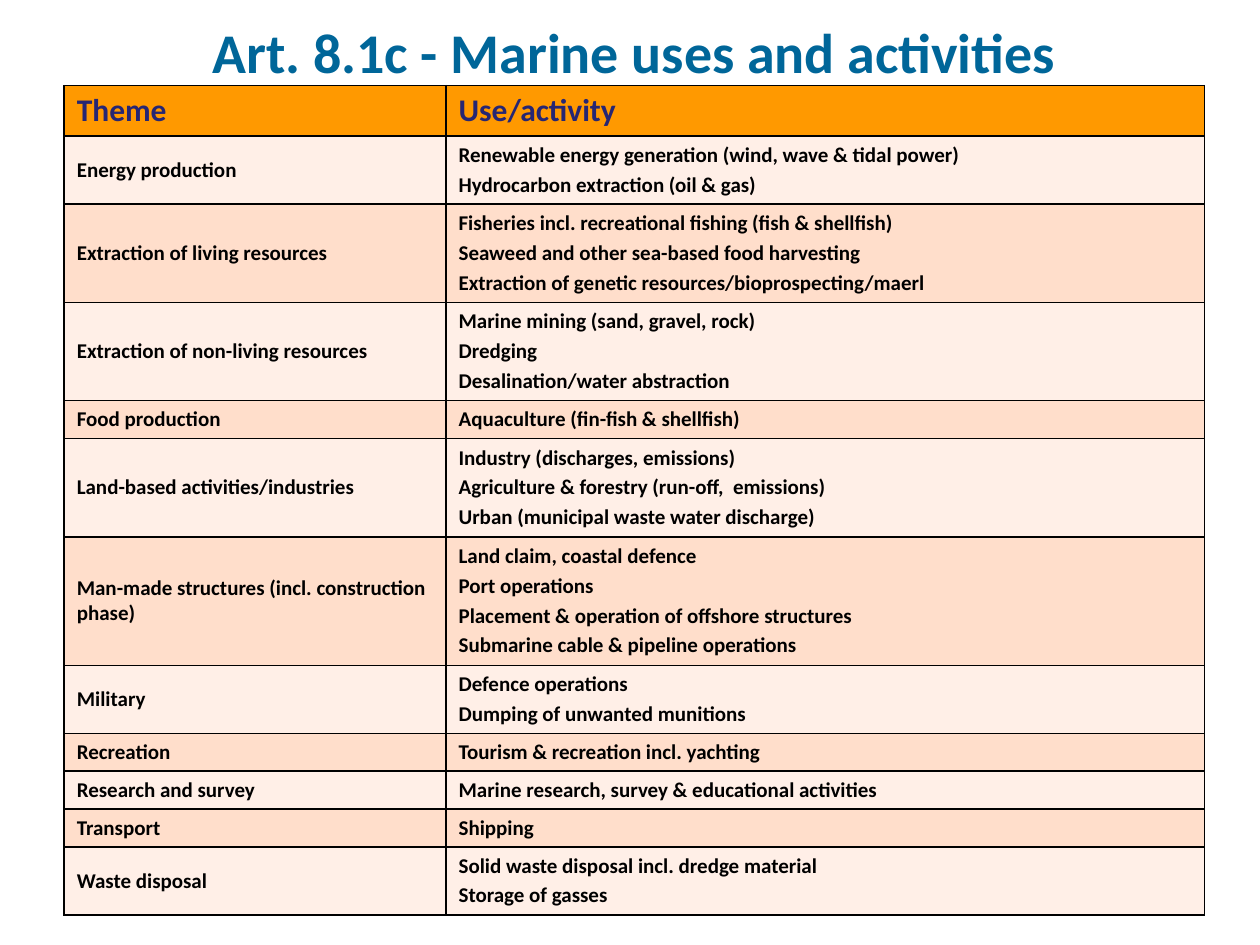
"""Build the slide listing marine uses and activities by theme."""
from lxml import etree
from pptx import Presentation
from pptx import util as u
from pptx.dml.color import RGBColor
from pptx.enum import text
from pptx.oxml import ns

TITLE = "Art. 8.1c - Marine uses and activities"
HEADER = ("Theme", ["Use/activity"])
ACTIVITIES = [
    ("Energy production", [
        "Renewable energy generation (wind, wave & tidal power)",
        "Hydrocarbon extraction (oil & gas)"]),
    ("Extraction of living resources", [
        "Fisheries incl. recreational fishing (fish & shellfish)",
        "Seaweed and other sea-based food harvesting",
        "Extraction of genetic resources/bioprospecting/maerl"]),
    ("Extraction of non-living resources", [
        "Marine mining (sand, gravel, rock)",
        "Dredging",
        "Desalination/water abstraction"]),
    ("Food production", ["Aquaculture (fin-fish & shellfish)"]),
    ("Land-based activities/industries", [
        "Industry (discharges, emissions)",
        "Agriculture & forestry (run-off,  emissions)",
        "Urban (municipal waste water discharge)"]),
    ("Man-made structures (incl. construction phase)", [
        "Land claim, coastal defence",
        "Port operations",
        "Placement & operation of offshore structures",
        "Submarine cable & pipeline operations"]),
    ("Military", ["Defence operations", "Dumping of unwanted munitions"]),
    ("Recreation", ["Tourism & recreation incl. yachting"]),
    ("Research and survey", ["Marine research, survey & educational activities"]),
    ("Transport", ["Shipping"]),
    ("Waste disposal", [
        "Solid waste disposal incl. dredge material",
        "Storage of gasses"]),
]
THEME = {
    "font": "Calibri",
    "title": {"size": 32, "color": "006699"},
    "header": {"size": 18, "color": "262673"},
    "body": {"size": 12, "color": "000000"},
    "header_fill": "FF9900",
    "band_fills": ("FFEFE7", "FFDECB"),
    "border": "000000",
}
COLUMN_WIDTHS = (3.03, 6.02)
HEADER_HEIGHT = 0.4
ROW_PADDING, LINE_HEIGHT = 0.06, 0.24


def write_text(frame, lines, *, size, color, align=text.PP_ALIGN.LEFT):
    frame.word_wrap = True
    for index, line in enumerate(lines):
        paragraph = frame.add_paragraph() if index else frame.paragraphs[0]
        paragraph.alignment = align
        if index:
            paragraph.space_before = u.Pt(size * 0.2)
        run = paragraph.add_run()
        run.text = line
        run.font.name = THEME["font"]
        run.font.size = u.Pt(size)
        run.font.bold = True
        run.font.color.rgb = RGBColor.from_string(color)


def add_borders(cell):
    properties = cell._tc.get_or_add_tcPr()
    for index, side in enumerate(("lnL", "lnR", "lnT", "lnB")):
        line = etree.Element(ns.qn(f"a:{side}"), w=str(u.Pt(1)))
        fill = etree.SubElement(line, ns.qn("a:solidFill"))
        etree.SubElement(fill, ns.qn("a:srgbClr"), val=THEME["border"])
        properties.insert(index, line)


def fill_row(table, index, entry, height, fill, style):
    table.rows[index].height = u.Inches(height)
    theme, uses = entry
    for cell, lines in zip(table.rows[index].cells, ([theme], uses)):
        cell.vertical_anchor = text.MSO_ANCHOR.MIDDLE
        cell.margin_left = cell.margin_right = u.Inches(0.1)
        cell.margin_top = cell.margin_bottom = u.Inches(0.05)
        cell.fill.solid()
        cell.fill.fore_color.rgb = RGBColor.from_string(fill)
        add_borders(cell)
        write_text(cell.text_frame, lines, **style)


def add_title(slide):
    shape = slide.shapes.add_textbox(
        u.Inches(0.7), u.Inches(0.13), u.Inches(8.67), u.Inches(0.55))
    shape.text_frame.vertical_anchor = text.MSO_ANCHOR.MIDDLE
    write_text(shape.text_frame, [TITLE], align=text.PP_ALIGN.CENTER, **THEME["title"])


def add_activity_table(slide):
    heights = [ROW_PADDING + LINE_HEIGHT * len(uses) for _, uses in ACTIVITIES]
    table = slide.shapes.add_table(
        len(ACTIVITIES) + 1, len(COLUMN_WIDTHS), u.Inches(0.51), u.Inches(0.68),
        u.Inches(sum(COLUMN_WIDTHS)), u.Inches(HEADER_HEIGHT + sum(heights))).table
    for column, width in zip(table.columns, COLUMN_WIDTHS):
        column.width = u.Inches(width)
    fill_row(table, 0, HEADER, HEADER_HEIGHT, THEME["header_fill"], THEME["header"])
    for index, (entry, height) in enumerate(zip(ACTIVITIES, heights)):
        fill = THEME["band_fills"][index % 2]
        fill_row(table, index + 1, entry, height, fill, THEME["body"])


def main():
    presentation = Presentation()
    presentation.slide_width = u.Inches(10)
    presentation.slide_height = u.Inches(7.5)
    slide = presentation.slides.add_slide(presentation.slide_layouts[6])
    add_title(slide)
    add_activity_table(slide)
    presentation.save("out.pptx")


if __name__ == "__main__":
    main()
